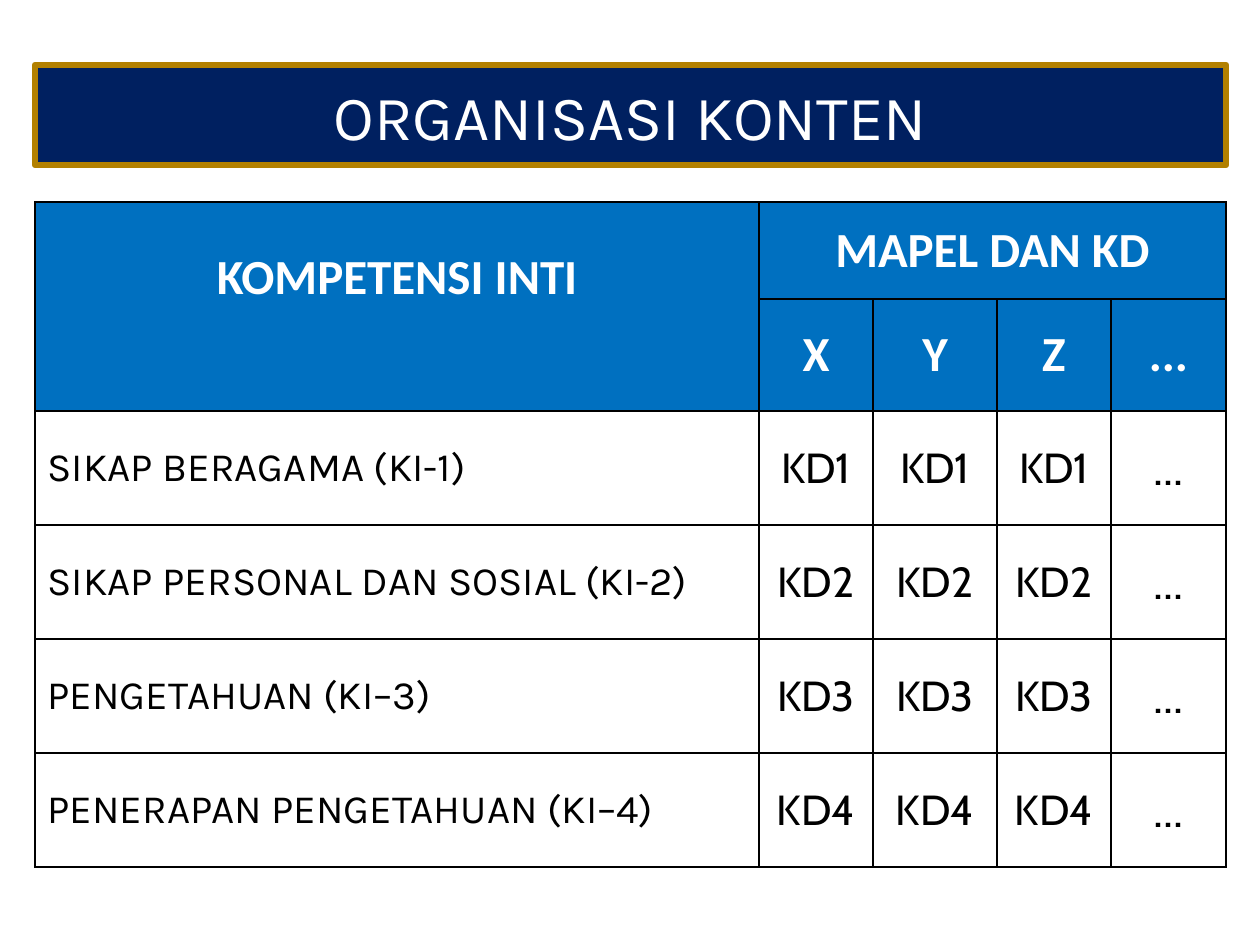
from dataclasses import dataclass

from lxml import etree
from pptx import Presentation
from pptx.dml.color import RGBColor
from pptx.enum.text import MSO_ANCHOR, MSO_AUTO_SIZE, PP_ALIGN
from pptx.oxml import parse_xml
from pptx.oxml.ns import nsdecls, qn
from pptx.util import Emu, Pt

PX_PER_INCH = 126


@dataclass(frozen=True)
class TextStyle:
    font: str
    size: int
    color: str
    bold: bool = False
    align: PP_ALIGN = PP_ALIGN.CENTER


class Theme:
    NAVY = "002060"
    GOLD = "B28000"
    BLUE = "0070C0"
    WHITE = "FFFFFF"
    BLACK = "000000"
    TITLE_LINE = 3.78
    GRID_LINE = 1
    TITLE = TextStyle("Karla", 36, WHITE)
    HEADER = TextStyle("Calibri", 28, WHITE, bold=True)
    COMPETENCY = TextStyle("Karla", 23, BLACK, align=PP_ALIGN.LEFT)
    KD = TextStyle("Cabin", 24, BLACK)
    ELLIPSIS = TextStyle("Cabin", 28, BLACK)


COMPETENCIES = [
    "SIKAP BERAGAMA (KI-1)",
    "SIKAP PERSONAL DAN SOSIAL (KI-2)",
    "PENGETAHUAN (KI–3)",
    "PENERAPAN PENGETAHUAN (KI–4)",
]
SUBJECTS = ["X", "Y", "Z", "..."]
COLUMN_WIDTHS = [724, 114, 124, 114, 115]
ROW_HEIGHTS = [97, 111] + [114] * len(COMPETENCIES)
HEADER_ROWS = 2


def px(length):
    return Emu(round(length * 914400 / PX_PER_INCH))


def rgb(value):
    return RGBColor.from_string(value)


def write_text(frame, text, style):
    frame.text = text
    para = frame.paragraphs[0]
    para.alignment = style.align
    para.font.name = style.font
    para.font.size = Pt(style.size)
    para.font.bold = style.bold
    para.font.color.rgb = rgb(style.color)


def format_cell(cell, fill):
    """Fill the cell and draw the grid line on its four sides."""
    cell.fill.solid()
    cell.fill.fore_color.rgb = rgb(fill)
    cell.vertical_anchor = MSO_ANCHOR.MIDDLE
    properties = cell._tc.get_or_add_tcPr()
    for index, side in enumerate("LRTB"):
        properties.insert(index, parse_xml(
            f'<a:ln{side} {nsdecls("a")} w="{Pt(Theme.GRID_LINE)}"><a:solidFill>'
            f'<a:srgbClr val="{Theme.BLACK}"/></a:solidFill></a:ln{side}>'))


def place_title(page, left, top, width, height):
    title = page.shapes.title
    title.left, title.top, title.width, title.height = map(px, (left, top, width, height))
    title.fill.solid()
    title.fill.fore_color.rgb = rgb(Theme.NAVY)
    title.line.color.rgb = rgb(Theme.GOLD)
    title.line.width = Pt(Theme.TITLE_LINE)
    etree.SubElement(title.line._get_or_add_ln(), qn("a:round"))
    frame = title.text_frame
    frame.auto_size = MSO_AUTO_SIZE.NONE
    frame.vertical_anchor = MSO_ANCHOR.MIDDLE
    write_text(frame, "ORGANISASI KONTEN", Theme.TITLE)


def write_headers(table):
    competency, subjects = table.cell(0, 0), table.cell(0, 1)
    competency.merge(table.cell(1, 0))
    subjects.merge(table.cell(0, len(SUBJECTS)))
    write_text(competency.text_frame, "KOMPETENSI INTI", Theme.HEADER)
    competency.vertical_anchor = MSO_ANCHOR.TOP
    competency.margin_top = px(46)
    write_text(subjects.text_frame, "MAPEL DAN KD", Theme.HEADER)
    for column, subject in enumerate(SUBJECTS, 1):
        write_text(table.cell(1, column).text_frame, subject, Theme.HEADER)


def write_competencies(table):
    for number, competency in enumerate(COMPETENCIES, 1):
        row = HEADER_ROWS + number - 1
        write_text(table.cell(row, 0).text_frame, competency, Theme.COMPETENCY)
        for column, subject in enumerate(SUBJECTS, 1):
            frame = table.cell(row, column).text_frame
            if subject == "...":
                write_text(frame, subject, Theme.ELLIPSIS)
            else:
                write_text(frame, f"KD{number}", Theme.KD)


def place_table(page, left, top):
    table = page.shapes.add_table(
        len(ROW_HEIGHTS), len(COLUMN_WIDTHS), px(left), px(top),
        px(sum(COLUMN_WIDTHS)), px(sum(ROW_HEIGHTS))).table
    for column, width in zip(table.columns, COLUMN_WIDTHS):
        column.width = px(width)
    for index, (row, height) in enumerate(zip(table.rows, ROW_HEIGHTS)):
        row.height = px(height)
        for cell in row.cells:
            format_cell(cell, Theme.BLUE if index < HEADER_ROWS else Theme.WHITE)
    write_headers(table)
    write_competencies(table)


def main():
    deck = Presentation()
    deck.slide_width, deck.slide_height = px(1260), px(945)
    page = deck.slides.add_slide(deck.slide_layouts.get_by_name("Title Only"))
    place_title(page, 35, 65, sum(COLUMN_WIDTHS), 100)
    place_table(page, 35, 202)
    deck.save("out.pptx")


if __name__ == "__main__":
    main()
